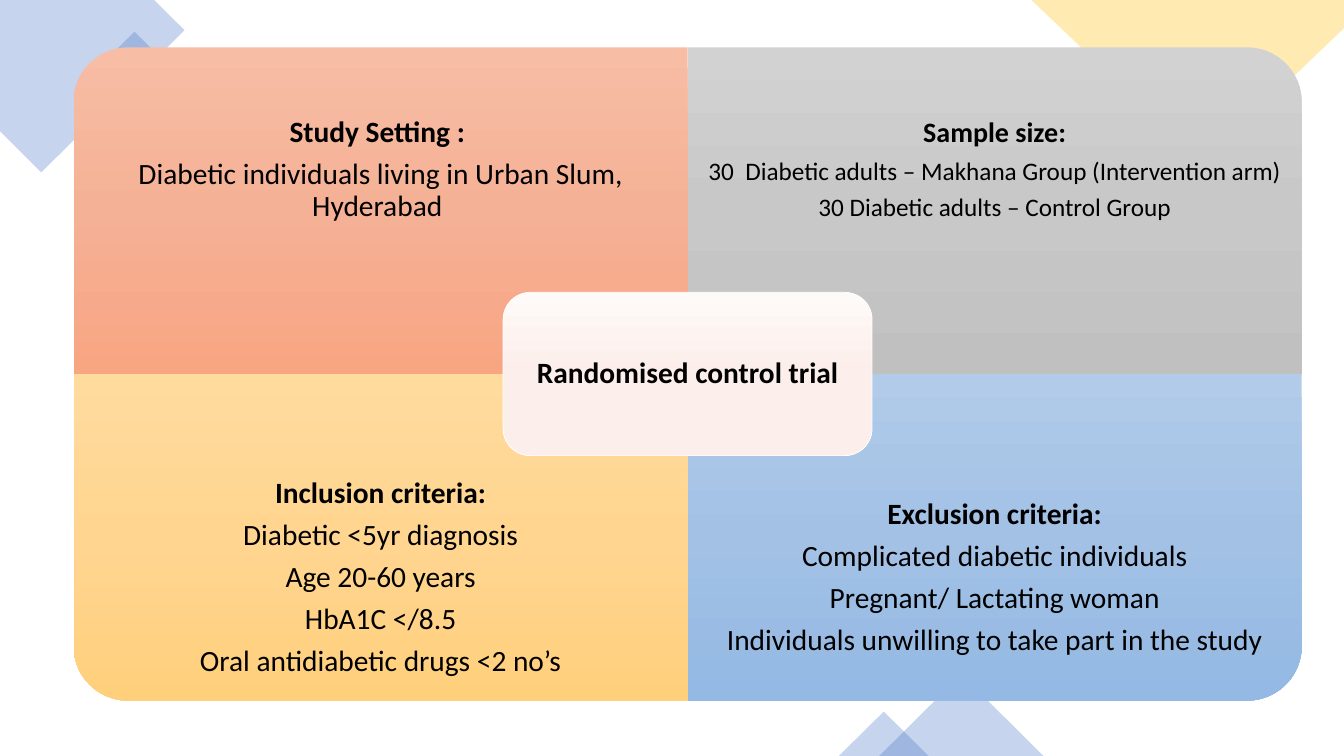
import pptx
import pptx.util
import pptx.dml.color
import pptx.enum.shapes
import pptx.enum.text
import pptx.oxml
import pptx.oxml.ns

Inches = pptx.util.Inches
Pt = pptx.util.Pt
SHAPES = pptx.enum.shapes.MSO_SHAPE
BLUE, YELLOW = "4472C4", "FFC000"


def paint(shape, colors, alpha=None):
    """Fill with one colour, or with evenly spaced colours from top to bottom."""
    shape.shadow.inherit = False
    shape.line.fill.background()
    if len(colors) == 1:
        shape.fill.solid()
        shape.fill.fore_color.rgb = pptx.dml.color.RGBColor.from_string(colors[0])
        color = shape.fill._xPr.find(".//" + pptx.oxml.ns.qn("a:srgbClr"))
        color.append(pptx.oxml.parse_xml(
            f'<a:alpha {pptx.oxml.ns.nsdecls("a")} val="{alpha * 1000}"/>'))
        return
    shape.fill.gradient()
    gradient = shape.fill._xPr.find(pptx.oxml.ns.qn("a:gradFill"))
    stops = "".join(
        f'<a:gs pos="{index * 50000}"><a:srgbClr val="{color}"/></a:gs>'
        for index, color in enumerate(colors))
    gradient.getparent().replace(gradient, pptx.oxml.parse_xml(
        f'<a:gradFill {pptx.oxml.ns.nsdecls("a")} rotWithShape="0">'
        f'<a:gsLst>{stops}</a:gsLst><a:lin ang="5400000" scaled="0"/></a:gradFill>'))


def add_text(box, inset, lines):
    """Write centred (text, size) lines; the first one is bold."""
    frame = slide.shapes.add_textbox(*[Inches(value) for value in box]).text_frame
    frame_format = {
        "word_wrap": True,
        "vertical_anchor": pptx.enum.text.MSO_ANCHOR.MIDDLE,
        "margin_left": Inches(inset), "margin_right": Inches(inset),
        "margin_top": Inches(inset), "margin_bottom": Inches(inset),
    }
    for name, value in frame_format.items():
        setattr(frame, name, value)
    for index, (text, size) in enumerate(lines):
        paragraph = frame.add_paragraph() if index else frame.paragraphs[0]
        paragraph.alignment = pptx.enum.text.PP_ALIGN.CENTER
        paragraph.line_spacing = 0.9
        paragraph.space_after = Pt(0.35 * size)
        run = paragraph.add_run()
        run.text = text
        font_format = {"name": "Calibri", "size": Pt(size), "bold": index == 0}
        for name, value in font_format.items():
            setattr(run.font, name, value)
        run.font.color.rgb = pptx.dml.color.RGBColor.from_string("000000")


presentation = pptx.Presentation()
presentation.slide_width = Inches(13.33)
presentation.slide_height = Inches(7.5)
slide = presentation.slides.add_slide(presentation.slide_layouts[6])

# Corner decorations: clipped diamonds, whole diamonds and triangles
decorations = [
    ("outline", BLUE, [(1.53, 0), (0, 0), (0, 1.3), (0.41, 1.71), (1.83, 0.3)]),
    ("diamond", BLUE, (0.98, 0.46, 0.71, 0.71)),
    ("diamond", YELLOW, (10.98, 0.72, 0.75, 0.75)),
    ("outline", YELLOW, [(13.33, 0), (10.23, 0), (11.93, 1.62), (13.33, 0.28)]),
    ("triangle", BLUE, (8.72, 6.69, 1.63, 0.81)),
    ("triangle", BLUE, (8.32, 7.06, 0.89, 0.44)),
]
for kind, color, geometry in decorations:
    if kind == "outline":
        points = [(Inches(x), Inches(y)) for x, y in geometry]
        builder = slide.shapes.build_freeform(*points[0])
        builder.add_line_segments(points[1:], close=True)
        shape = builder.convert_to_shape()
    else:
        preset = SHAPES.RECTANGLE if kind == "diamond" else SHAPES.ISOSCELES_TRIANGLE
        shape = slide.shapes.add_shape(preset, *[Inches(value) for value in geometry])
        shape.rotation = 315 if kind == "diamond" else 0
    paint(shape, [color], alpha=30)

# Four quadrants: column, row, rotation, gradient, lines
LEFT, TOP, WIDTH, HEIGHT = 0.73, 0.47, 6.09, 3.24
TEXT_HEIGHT = HEIGHT * 0.75
quadrants = [
    (0, 0, 270, ["F7BDA5", "F5B196", "F8A582"], [
        ("Study Setting : ", 21),
        ("Diabetic individuals living in Urban Slum, Hyderabad ", 21)]),
    (1, 0, 0, ["D2D2D2", "C8C8C8", "C0C0C0"], [
        ("Sample size:", 20),
        ("30  Diabetic adults – Makhana Group (Intervention arm)", 18),
        ("30 Diabetic adults – Control Group", 18)]),
    (0, 1, 180, ["FFDB9E", "FFD590", "FFD07C"], [
        ("Inclusion criteria:", 21),
        ("Diabetic <5yr diagnosis", 21),
        ("Age 20-60 years", 21),
        ("HbA1C </8.5", 21),
        ("Oral antidiabetic drugs <2 no’s", 21)]),
    (1, 1, 90, ["B1CBE9", "A3C1E5", "93B9E4"], [
        ("Exclusion criteria:", 21),
        ("Complicated diabetic individuals", 21),
        ("Pregnant/ Lactating woman", 21),
        ("Individuals unwilling to take part in the study", 21)]),
]
for column, row, rotation, colors, lines in quadrants:
    left, top = LEFT + column * WIDTH, TOP + row * HEIGHT
    # A quarter turn swaps the sides around the same centre
    width, height = (HEIGHT, WIDTH) if rotation % 180 else (WIDTH, HEIGHT)
    quadrant = slide.shapes.add_shape(
        SHAPES.ROUND_1_RECTANGLE,
        Inches(left + (WIDTH - width) / 2), Inches(top + (HEIGHT - height) / 2),
        Inches(width), Inches(height))
    quadrant.rotation = rotation
    paint(quadrant, colors)
    text_top = top + row * (HEIGHT - TEXT_HEIGHT)
    add_text((left, text_top, WIDTH, TEXT_HEIGHT), 0.16, lines)

# Centre label
center = slide.shapes.add_shape(
    SHAPES.ROUNDED_RECTANGLE, Inches(4.99), Inches(2.9), Inches(3.66), Inches(1.62))
paint(center, ["FEFAF8", "FCEEEA", "FDECE7"])
center.line.color.rgb = pptx.dml.color.RGBColor.from_string("FFFFFF")
center.line.width = Pt(0.5)
add_text((5.07, 2.98, 3.5, 1.46), 0.09, [("Randomised control trial", 21)])

presentation.save("out.pptx")
